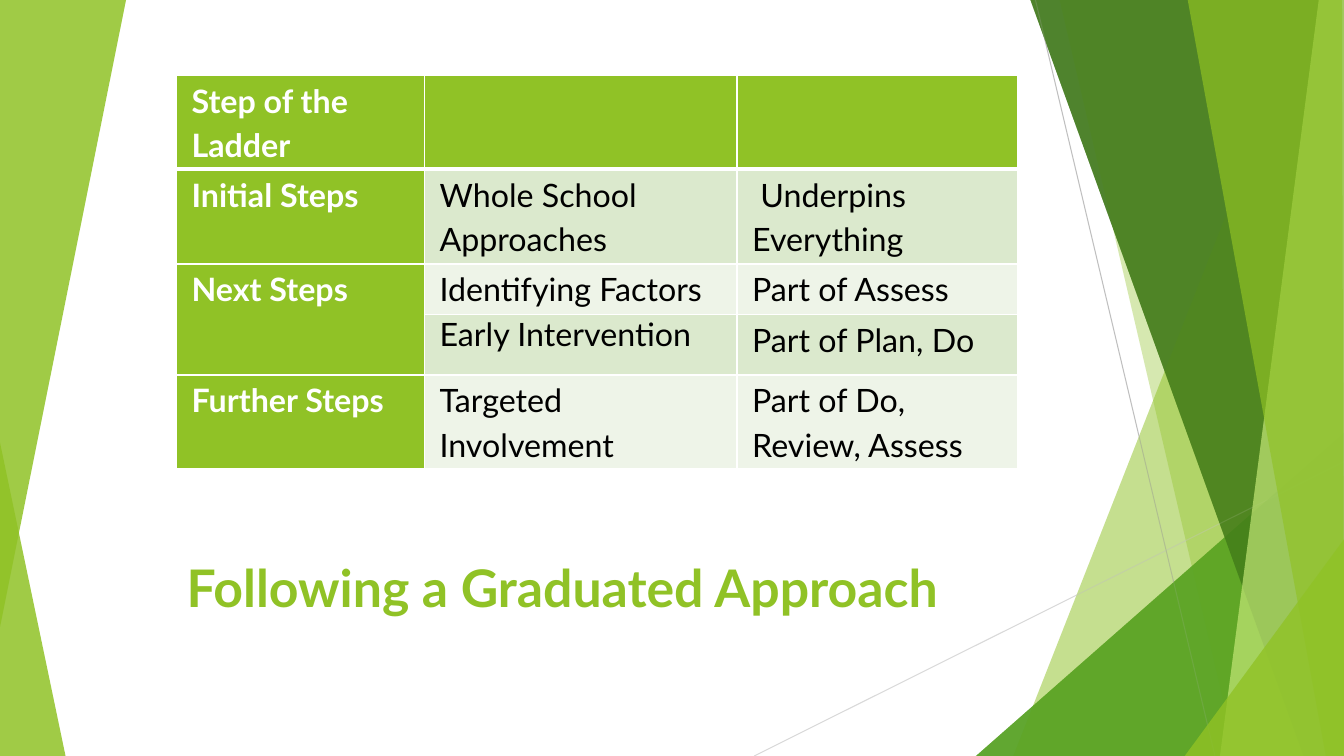
from lxml import etree
from pptx import Presentation
from pptx.dml.color import RGBColor
from pptx.enum.shapes import MSO_CONNECTOR
from pptx.enum.text import MSO_ANCHOR, MSO_AUTO_SIZE, PP_ALIGN
from pptx.oxml.ns import qn
from pptx.util import Inches, Pt

STRAIGHT = MSO_CONNECTOR.STRAIGHT
BOTTOM, TOP = MSO_ANCHOR.BOTTOM, MSO_ANCHOR.TOP
LEFT = PP_ALIGN.LEFT
NO_AUTOFIT = MSO_AUTO_SIZE.NONE

FONT = "Lato"
LIME = RGBColor(0x90, 0xC2, 0x26)
GREEN = RGBColor(0x54, 0xA0, 0x21)
FOREST = RGBColor(0x3F, 0x78, 0x19)
PALE_LIME = RGBColor(0xC0, 0xE4, 0x74)
BAND_DARK = RGBColor(0xDB, 0xE9, 0xCD)
BAND_LIGHT = RGBColor(0xEE, 0xF4, 0xE8)
WHITE = RGBColor(0xFF, 0xFF, 0xFF)
BLACK = RGBColor(0, 0, 0)
LIGHT_GREY = RGBColor(0xD9, 0xD9, 0xD9)
MID_GREY = RGBColor(0xBF, 0xBF, 0xBF)

# Facets are plotted on a grid of hundredths of an inch
UNIT = Inches(0.01)
WIDTH, HEIGHT = 1333, 750

presentation = Presentation()
presentation.slide_width = WIDTH * UNIT
presentation.slide_height = HEIGHT * UNIT
slide = presentation.slides.add_slide(presentation.slide_layouts[5])


def add_facet(points, color, opacity):
    """Draw a borderless polygon with the given opacity in percent."""
    builder = slide.shapes.build_freeform(*points[0], scale=UNIT)
    builder.add_line_segments(points[1:], close=True)
    facet = builder.convert_to_shape()
    facet.shadow.inherit = False
    facet.line.fill.background()
    facet.fill.solid()
    facet.fill.fore_color.rgb = color
    color_element = facet.element.spPr.find(".//" + qn("a:srgbClr"))
    etree.SubElement(color_element, qn("a:alpha"), val=str(opacity * 1000))


def add_border(cell, side, points):
    """Give one side (L, R, T or B) of a table cell a white border."""
    border = etree.SubElement(cell._tc.get_or_add_tcPr(), qn("a:ln" + side), w=str(Pt(points)))
    fill = etree.SubElement(border, qn("a:solidFill"))
    etree.SubElement(fill, qn("a:srgbClr"), val=str(WHITE))


# Background facets: the right-hand fan lies both under and over the thin lines
bottom_right = (WIDTH, HEIGHT)
top_right = (WIDTH, 0)
right_fan = [
    ([(1300, 0), (1005, HEIGHT), bottom_right, top_right], LIME, 30),
    ([(1051, 0), (1226, HEIGHT), bottom_right, top_right], LIME, 20),
    ([(968, HEIGHT), (WIDTH, 429), bottom_right], GREEN, 72),
    ([(1022, 0), (1293, HEIGHT), bottom_right, top_right], FOREST, 70),
    ([(1308, 0), (1210, HEIGHT), bottom_right, top_right], PALE_LIME, 70),
    ([(1178, 0), (1315, HEIGHT), bottom_right, (1331, 0)], LIME, 65),
    ([(1175, HEIGHT), (WIDTH, 535), bottom_right], LIME, 80),
]
thin_lines = [
    ((748, HEIGHT), (WIDTH, 458), LIGHT_GREY),
    ((1027, 0), (1205, HEIGHT), MID_GREY),
]

add_facet([(0, 439), (65, HEIGHT), (0, HEIGHT)], LIME, 85)
for facet in right_fan:
    add_facet(*facet)
for start, end, color in thin_lines:
    line = slide.shapes.add_connector(STRAIGHT, *(value * UNIT for value in start + end))
    line.line.color.rgb = color
    line.line.width = Pt(0.75)
    etree.SubElement(line.element.spPr, qn("a:effectLst"))
for facet in right_fan:
    add_facet(*facet)
add_facet([(0, 0), (125, 0), (0, 622)], LIME, 85)

# Title
title = slide.shapes.title
title.left, title.top = Inches(1.75), Inches(5)
title.width, title.height = Inches(8.39), Inches(1.19)
title.text_frame.text = "Following a Graduated Approach"
title.text_frame.auto_size = NO_AUTOFIT
title.text_frame.word_wrap = True
title.text_frame.vertical_anchor = BOTTOM
paragraph = title.text_frame.paragraphs[0]
paragraph.alignment = LEFT
paragraph.line_spacing = 0.9
paragraph.space_after = Pt(6)
paragraph.font.name = FONT
paragraph.font.size = Pt(37)
paragraph.font.bold = True
paragraph.font.color.rgb = LIME

# Table of steps
steps = [
    ("Step of the Ladder", "", ""),
    ("Initial Steps", "Whole School Approaches", " Underpins Everything"),
    ("Next Steps", "Identifying Factors", "Part of Assess"),
    ("", "Early Intervention", "Part of Plan, Do"),
    ("Further Steps", "Targeted Involvement", "Part of Do, Review, Assess"),
]
column_widths = [2.46, 3.1, 2.78]
row_heights = [0.93, 0.94, 0.5, 0.6, 0.93]

table = slide.shapes.add_table(
    len(row_heights), len(column_widths), Inches(1.75), Inches(0.75),
    Inches(sum(column_widths)), Inches(sum(row_heights))).table
for column, width in zip(table.columns, column_widths):
    column.width = Inches(width)
for row, height in zip(table.rows, row_heights):
    row.height = Inches(height)

for row_index, texts in enumerate(steps):
    band = BAND_DARK if row_index % 2 else BAND_LIGHT
    for column_index, text in enumerate(texts):
        cell = table.cell(row_index, column_index)
        is_heading = row_index == 0 or column_index == 0
        cell.margin_left = cell.margin_right = Inches(0.15)
        cell.margin_top = cell.margin_bottom = 0
        cell.vertical_anchor = TOP
        for side in "LRTB":
            under_header = (row_index, side) in ((0, "B"), (1, "T"))
            add_border(cell, side, 3 if under_header else 1)
        cell.fill.solid()
        cell.fill.fore_color.rgb = LIME if is_heading else band
        if not text:
            continue
        cell.text = text
        paragraph = cell.text_frame.paragraphs[0]
        single_spaced = text == "Early Intervention"
        paragraph.line_spacing = 1.0 if single_spaced else 1.15
        paragraph.space_before = Pt(5)
        paragraph.space_after = Pt(0 if single_spaced else 10)
        paragraph.font.name = FONT
        paragraph.font.size = Pt(23)
        paragraph.font.bold = is_heading
        paragraph.font.color.rgb = WHITE if is_heading else BLACK

table.cell(2, 0).merge(table.cell(3, 0))

presentation.save("out.pptx")
